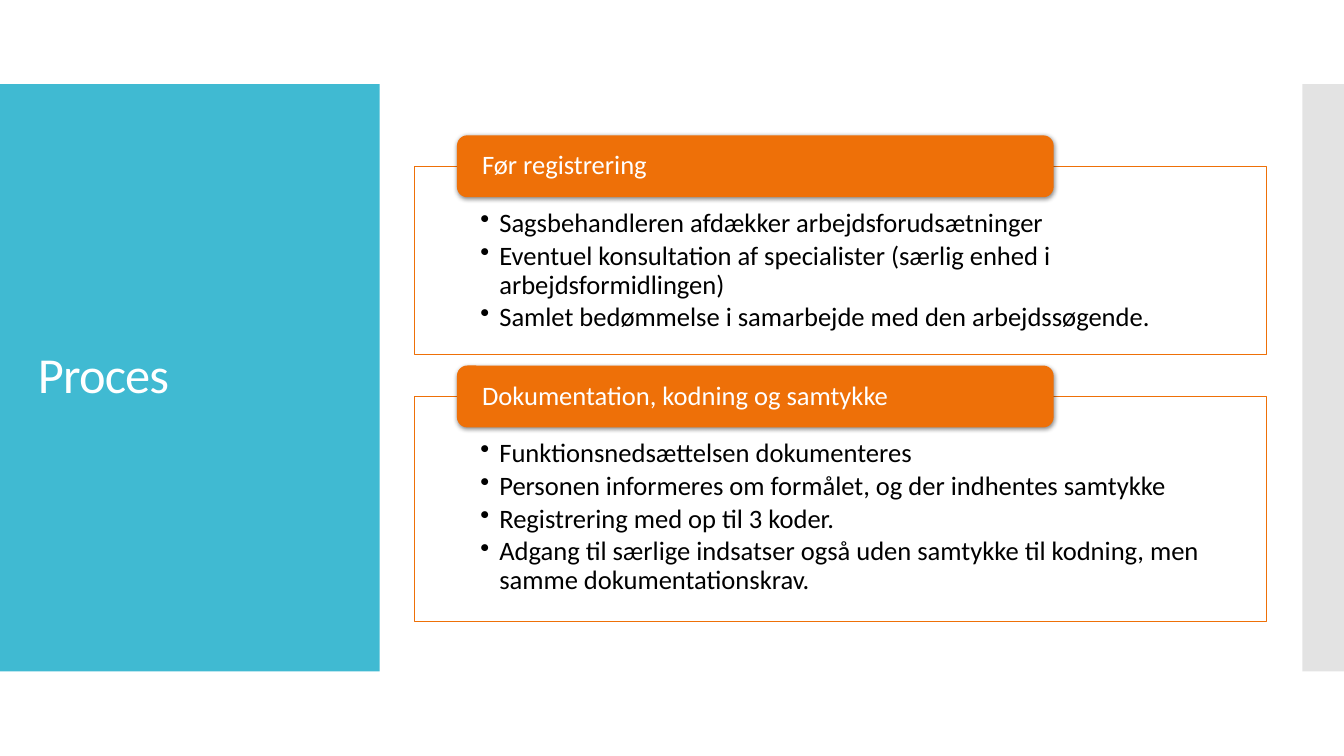
"""Build the slide "Proces": a title panel beside two headed lists."""
from dataclasses import dataclass

from pptx import Presentation
from pptx import util as u
from pptx.dml.color import RGBColor
from pptx.enum import shapes, text
from pptx.oxml import parse_xml
from pptx.oxml.ns import nsdecls, qn
from pptx.shapes.autoshape import Shape
from pptx.slide import Slide

WHITE, BLACK, TEAL, GREY, ORANGE = "FFFFFF", "000000", "40BAD2", "C8C8C8", "EE7008"
SECTION_LEFT, SECTION_WIDTH = 296, 608.4
HEADER_LEFT, HEADER_WIDTH, HEADER_HEIGHT = 326.4, 426.2, 44.2
BULLET_INDENT = 13.5
RECTANGLE = shapes.MSO_SHAPE.RECTANGLE
ROUNDED = shapes.MSO_SHAPE.ROUNDED_RECTANGLE


@dataclass
class Section:
    """A headed list in a frame."""
    heading: str
    items: list[str]
    top: float
    height: float


@dataclass
class TextStyle:
    """The look of the text in a box."""
    color: str
    size: float
    insets: tuple[float, float, float, float]
    anchor: text.MSO_ANCHOR = text.MSO_ANCHOR.MIDDLE
    space_after: float = 0
    bulleted: bool = False
    tracking: int = 0


TITLE_STYLE = TextStyle(WHITE, 36, (7.2, 3.6, 7.2, 3.6), tracking=-60)
HEADING_STYLE = TextStyle(WHITE, 19, (15.8, 0, 15.8, 0))
LIST_STYLE = TextStyle(BLACK, 19, (47.2, 30.9, 47.2, 10.8),
                       text.MSO_ANCHOR.TOP, 2.85, bulleted=True)

SECTIONS = [
    Section("Før registrering", [
        "Sagsbehandleren afdækker arbejdsforudsætninger",
        "Eventuel konsultation af specialister (særlig enhed i arbejdsformidlingen)",
        "Samlet bedømmelse i samarbejde med den arbejdssøgende.",
    ], 118.8, 134.5),
    Section("Dokumentation, kodning og samtykke", [
        "Funktionsnedsættelsen dokumenteres",
        "Personen informeres om formålet, og der indhentes samtykke",
        "Registrering med op til 3 koder.",
        "Adgang til særlige indsatser også uden samtykke til kodning, "
        "men samme dokumentationskrav.",
    ], 283.2, 160.4),
]


def rgb(color: str) -> RGBColor:
    """Turn a hex string into a colour."""
    return RGBColor.from_string(color)


def set_format(target: object, values: dict[str, object]) -> None:
    """Set each named attribute of the target."""
    for name, value in values.items():
        setattr(target, name, value)


def add_box(page: Slide, kind: shapes.MSO_SHAPE, place: tuple[float, ...], fill: str,
            line: str | None = None, opacity: int = 100) -> Shape:
    """Add a filled shape without a shadow."""
    box = page.shapes.add_shape(kind, *map(u.Pt, place))
    box.shadow.inherit = False
    box.fill.solid()
    box.fill.fore_color.rgb = rgb(fill)
    if opacity < 100:
        color = box._element.spPr.find(qn("a:solidFill"))[0]
        color.append(parse_xml(f'<a:alpha {nsdecls("a")} val="{opacity * 1000}"/>'))
    if line:
        box.line.color.rgb = rgb(line)
        box.line.width = u.Pt(0.75)
    else:
        box.line.fill.background()
    return box


def add_shadow(box: Shape) -> None:
    """Give the box a soft shadow below."""
    box._element.spPr.find(qn("a:effectLst")).append(parse_xml(
        f'<a:outerShdw {nsdecls("a")} blurRad="{u.Pt(3.5)}" dist="{u.Pt(1.1)}" '
        'dir="5400000" rotWithShape="0"><a:srgbClr val="000000">'
        '<a:alpha val="45000"/></a:srgbClr></a:outerShdw>'))


def add_bullet(para: text.PP_ALIGN) -> None:
    """Give the paragraph a hanging bullet."""
    props = para._p.get_or_add_pPr()
    indent = u.Pt(BULLET_INDENT)
    props.set("marL", str(indent))
    props.set("indent", str(-indent))
    props.append(parse_xml(f'<a:buChar {nsdecls("a")} char="•"/>'))


def write(box: Shape, lines: list[str], style: TextStyle) -> None:
    """Write one paragraph per line in the box."""
    frame = box.text_frame
    sides = ("margin_left", "margin_top", "margin_right", "margin_bottom")
    set_format(frame, {"word_wrap": True, "vertical_anchor": style.anchor,
                       **dict(zip(sides, map(u.Pt, style.insets)))})
    for index, line in enumerate(lines):
        para = frame.add_paragraph() if index else frame.paragraphs[0]
        set_format(para, {"alignment": text.PP_ALIGN.LEFT, "line_spacing": 0.9,
                          "space_after": u.Pt(style.space_after)})
        if style.bulleted:
            add_bullet(para)
        span = para.add_run()
        span.text = line
        set_format(span.font, {"name": "Calibri", "size": u.Pt(style.size)})
        span.font.color.rgb = rgb(style.color)
        if style.tracking:
            span._r.get_or_add_rPr().set("spc", str(style.tracking))


def add_section(page: Slide, section: Section) -> None:
    """Add the framed list and the header across its top edge."""
    frame_place = (SECTION_LEFT, section.top, SECTION_WIDTH, section.height)
    frame = add_box(page, RECTANGLE, frame_place, WHITE, ORANGE, opacity=90)
    write(frame, section.items, LIST_STYLE)
    header_place = (HEADER_LEFT, section.top - HEADER_HEIGHT / 2,
                    HEADER_WIDTH, HEADER_HEIGHT)
    header = add_box(page, ROUNDED, header_place, ORANGE)
    add_shadow(header)
    write(header, [section.heading], HEADING_STYLE)


def main() -> None:
    """Build and save the deck."""
    deck = Presentation()
    set_format(deck, {"slide_width": u.Pt(960), "slide_height": u.Pt(540)})
    page = deck.slides.add_slide(deck.slide_layouts[6])
    add_box(page, RECTANGLE, (0, 60, 271.2, 419.5), TEAL)
    add_box(page, RECTANGLE, (930.4, 60, 29.6, 419.5), GREY, opacity=50)
    title = page.shapes.add_textbox(*map(u.Pt, (20, 88.6, 232, 362)))
    write(title, ["Proces"], TITLE_STYLE)
    for section in SECTIONS:
        add_section(page, section)
    deck.save("out.pptx")


if __name__ == "__main__":
    main()
